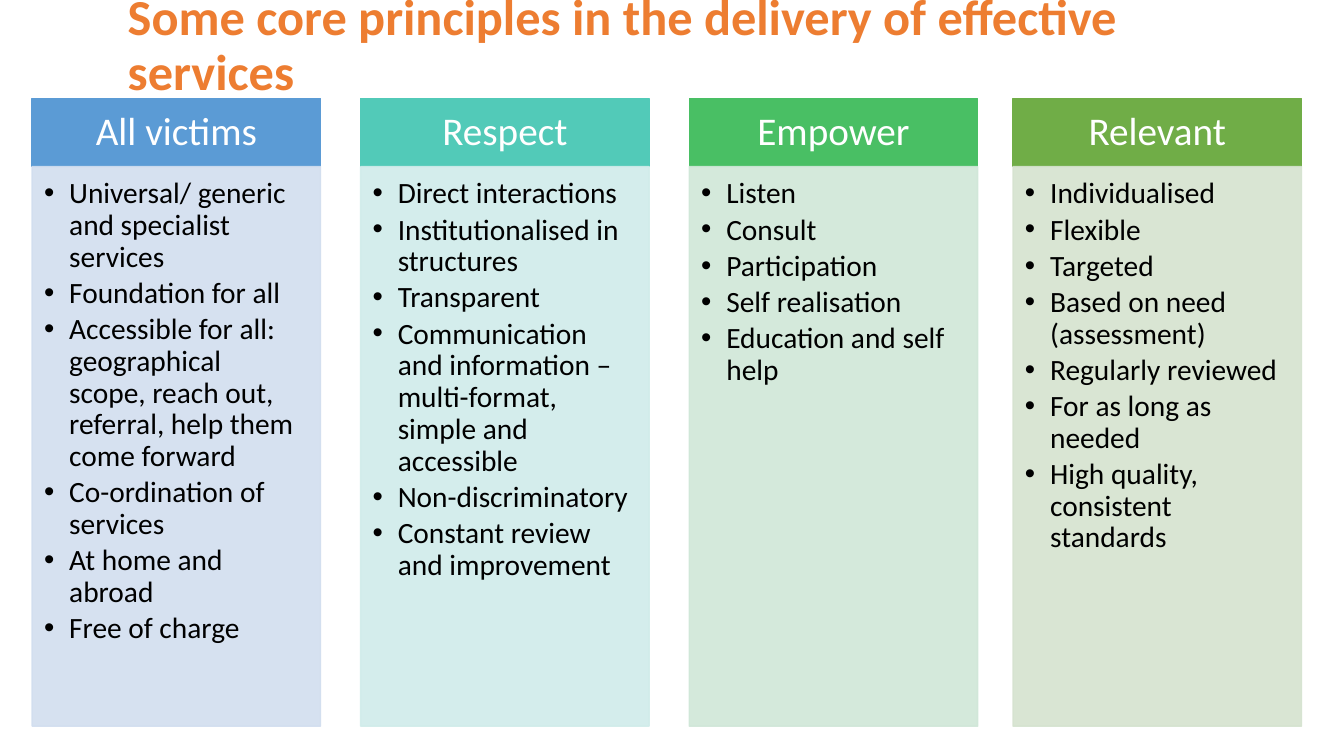
from pptx import Presentation
from pptx.dml.color import RGBColor as RGB
from pptx.enum.shapes import MSO_SHAPE as Form
from pptx.enum.text import MSO_ANCHOR as Anchor, PP_ALIGN as Align
from pptx.oxml.ns import qn
from pptx.util import Cm, Pt
from lxml.etree import SubElement as Sub

# Columns: left edge in cm, head, head colour, body colour, points
COLS = [
    (0.81, "All victims", "5B9BD5", "D2DEEF", [
        "Universal/ generic and specialist services",
        "Foundation for all",
        "Accessible for all: geographical scope, reach out, referral, "
        "help them come forward",
        "Co-ordination of services",
        "At home and abroad",
        "Free of charge"]),
    (9.09, "Respect", "52CAB8", "D0ECEA", [
        "Direct interactions",
        "Institutionalised in structures",
        "Transparent",
        "Communication and information – multi-format, simple and accessible",
        "Non-discriminatory",
        "Constant review and improvement"]),
    (17.37, "Empower", "49BF64", "D0E7D8", [
        "Listen",
        "Consult",
        "Participation",
        "Self realisation",
        "Education and self help"]),
    (25.53, "Relevant", "70AD47", "D5E3CF", [
        "Individualised",
        "Flexible",
        "Targeted",
        "Based on need (assessment)",
        "Regularly reviewed",
        "For as long as needed",
        "High quality, consistent standards"]),
]
WIDTH = 7.27
TOP, HEAD, BODY = 2.48, 1.72, 14.1


def paint(fmt, code, alpha=100):
    """Give a fill a solid colour, with opacity in percent."""
    fmt.solid()
    fmt.fore_color.rgb = RGB.from_string(code)
    if alpha < 100:
        tone = fmt._xPr.find(qn("a:solidFill"))[0]
        Sub(tone, qn("a:alpha"), val=str(alpha * 1000))


def dot(para):
    """Add a bullet with a hanging indent."""
    props = para._p.get_or_add_pPr()
    props.set("marL", str(Cm(0.635)))
    props.set("indent", str(-Cm(0.635)))
    Sub(props, qn("a:buFont"), typeface="Arial")
    Sub(props, qn("a:buChar"), char="•")


def write(shape, lines, size, code, bold=False, align=Align.LEFT,
          anchor=Anchor.MIDDLE, pad=(0.25, 0.13, 0.25, 0.13),
          after=0, dots=False):
    """Fill a shape with formatted paragraphs."""
    frame = shape.text_frame
    frame.word_wrap = True
    frame.vertical_anchor = anchor
    (frame.margin_left, frame.margin_top,
     frame.margin_right, frame.margin_bottom) = map(Cm, pad)
    for i, line in enumerate(lines):
        para = frame.add_paragraph() if i else frame.paragraphs[0]
        para.alignment = align
        para.line_spacing = 0.9
        para.space_after = Pt(after)
        if dots:
            dot(para)
        run = para.add_run()
        run.text = line
        font = run.font
        font.name = "Calibri"
        font.size = Pt(size)
        font.bold = bold
        font.color.rgb = RGB.from_string(code)


def block(slide, left, top, high, code, alpha=100):
    """Draw one coloured rectangle of a column."""
    box = slide.shapes.add_shape(
        Form.RECTANGLE, Cm(left), Cm(top), Cm(WIDTH), Cm(high))
    box.shadow.inherit = False
    paint(box.fill, code, alpha)
    paint(box.line.fill, code, alpha)
    box.line.width = Pt(1)
    return box


def column(slide, left, head, dark, light, points):
    """Draw a head and the bulleted body under it."""
    cap = block(slide, left, TOP, HEAD, dark)
    write(cap, [head], 28, "FFFFFF", align=Align.CENTER,
          pad=(0.56, 0.3, 0.56, 0.3))
    body = block(slide, left, TOP + HEAD, BODY, light, alpha=90)
    write(body, points, 21, "000000", anchor=Anchor.TOP,
          pad=(0.3, 0.3, 0.41, 0.46), after=3.15, dots=True)


def main():
    deck = Presentation()
    deck.slide_width, deck.slide_height = Cm(33.87), Cm(19.05)
    slide = deck.slides.add_slide(deck.slide_layouts[6])

    # Title
    title = slide.shapes.add_textbox(Cm(2.97), Cm(0.33), Cm(29.2), Cm(1.7))
    write(title, ["Some core principles in the delivery of effective services"],
          36, "ED7D31", bold=True)

    # Four columns
    for col in COLS:
        column(slide, *col)

    deck.save("out.pptx")


if __name__ == "__main__":
    main()
